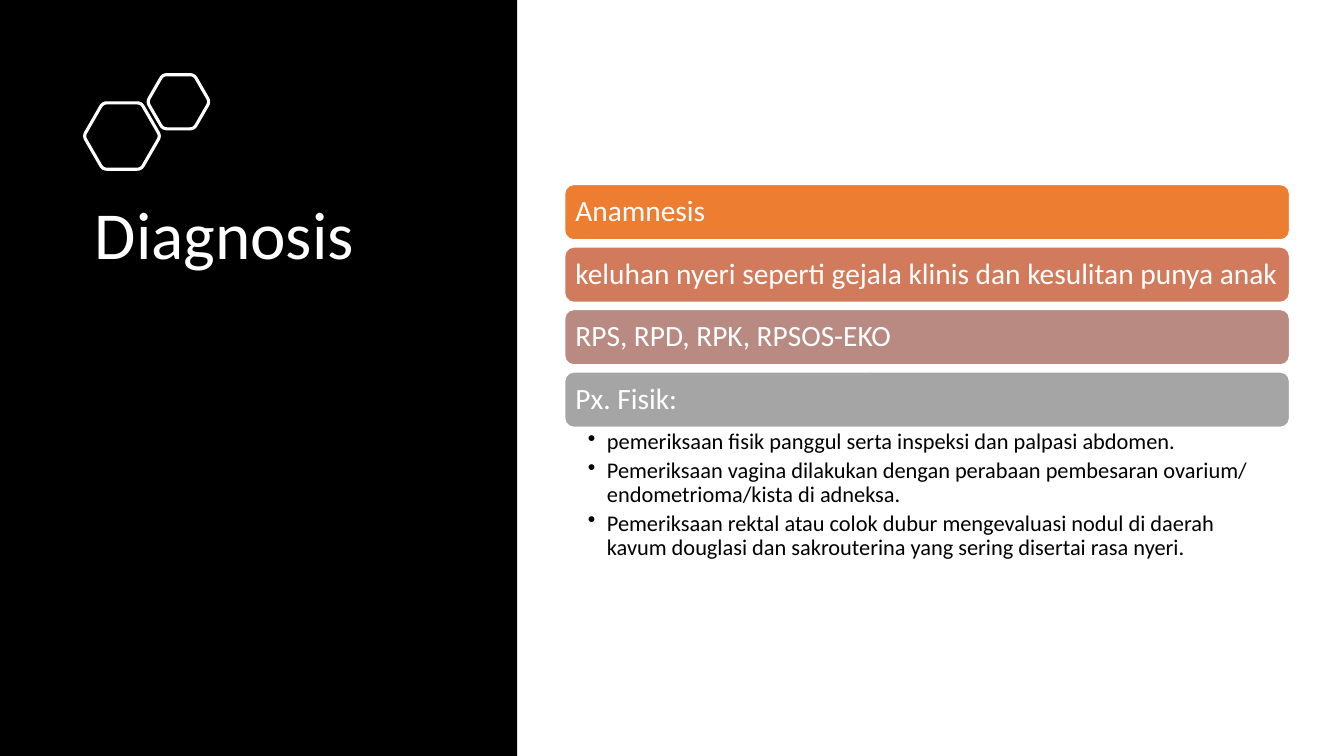
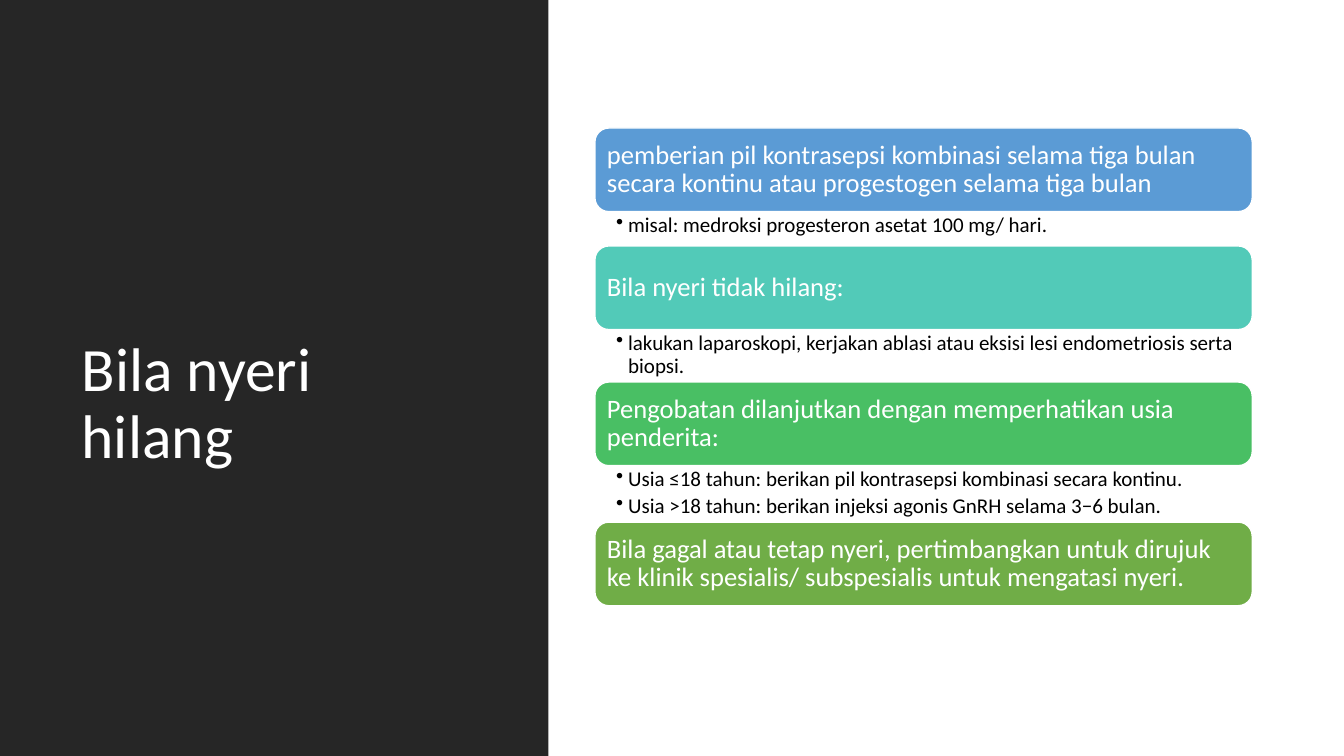
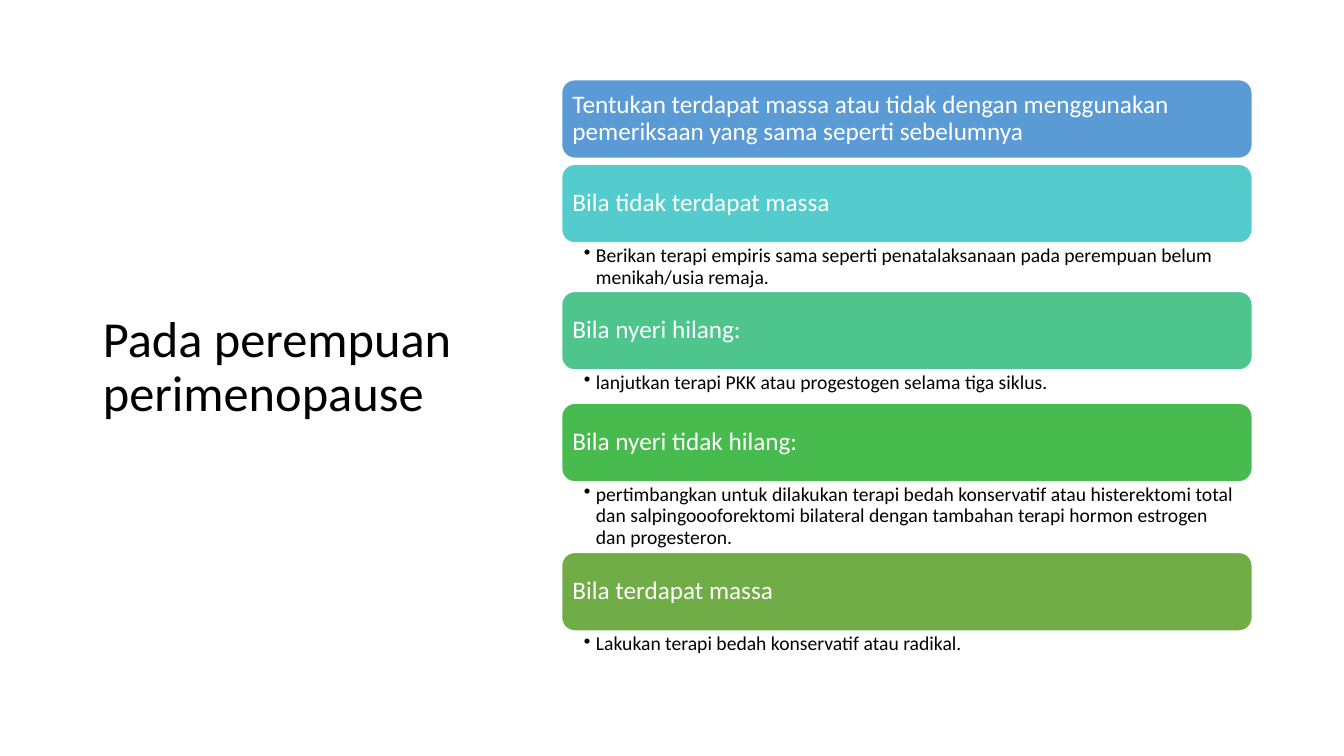
from math import cos, pi, sin

from lxml.etree import SubElement
from pptx import Presentation
from pptx.dml.color import RGBColor
from pptx.enum.shapes import MSO_SHAPE as Shape
from pptx.enum.text import MSO_ANCHOR as Anchor, MSO_AUTO_SIZE as Fit, PP_ALIGN as Align
from pptx.oxml.ns import qn
from pptx.util import Inches, Pt

WHITE = RGBColor(0xFF, 0xFF, 0xFF)
BLACK = RGBColor(0x00, 0x00, 0x00)
COAL = RGBColor(0x26, 0x26, 0x26)
ORANGE = RGBColor(0xED, 0x7D, 0x31)
CLAY = RGBColor(0xD1, 0x7B, 0x5C)
ROSE = RGBColor(0xB9, 0x8A, 0x82)
GRAY = RGBColor(0xA5, 0xA5, 0xA5)
BLUE = RGBColor(0x5B, 0x9B, 0xD5)
CYAN = RGBColor(0x54, 0xCC, 0xCD)
TEAL = RGBColor(0x52, 0xCA, 0xB8)
MINT = RGBColor(0x4D, 0xC5, 0x8D)
GREEN = RGBColor(0x49, 0xBF, 0x64)
GRASS = RGBColor(0x48, 0xBB, 0x4F)
LEAF = RGBColor(0x70, 0xAD, 0x47)


class Deck:
    font = "Calibri"
    title_only = 5

    def __init__(self):
        self.prs = Presentation()
        self.prs.slide_width = Inches(13.33)
        self.prs.slide_height = Inches(7.5)

    def add(self):
        layout = self.prs.slide_layouts[self.title_only]
        self.shapes = self.prs.slides.add_slide(layout).shapes

    def style(self, para, size, color):
        para.alignment = Align.LEFT
        para.line_spacing = 0.9
        para.font.name = self.font
        para.font.size = Pt(size)
        para.font.color.rgb = color

    def frame(self, shape, anchor, pads):
        """Set wrapping, anchor and the left, top, right and bottom insets."""
        frame = shape.text_frame
        frame.word_wrap = True
        frame.auto_size = Fit.NONE
        frame.vertical_anchor = anchor
        (frame.margin_left, frame.margin_top,
         frame.margin_right, frame.margin_bottom) = map(Inches, pads)
        return frame

    def title(self, text, box, size, anchor, color=WHITE):
        shape = self.shapes.title
        shape.left, shape.top, shape.width, shape.height = map(Inches, box)
        frame = self.frame(shape, anchor, (0.1, 0.05, 0.1, 0.05))
        frame.text = text
        self.style(frame.paragraphs[0], size, color)

    def panel(self, width, color):
        """Fill the left side of the slide, behind the title."""
        shape = self.shapes.add_shape(
            Shape.RECTANGLE, 0, 0, Inches(width), self.prs.slide_height)
        shape.shadow.inherit = False
        shape.fill.solid()
        shape.fill.fore_color.rgb = color
        shape.line.fill.background()
        self.shapes.title.element.addprevious(shape.element)

    def hexagon(self, x, y, radius, cut=0.04, steps=4):
        """Outline a hexagon centred on x, y, its corners rounded over cut."""
        tips = [(x + radius * cos(i * pi / 3), y + radius * sin(i * pi / 3))
                for i in range(6)]
        part = cut / radius
        dots = []
        for i, tip in enumerate(tips):
            start, end = ([a + (b - a) * part for a, b in zip(tip, near)]
                          for near in (tips[i - 1], tips[(i + 1) % 6]))
            for k in range(steps + 1):
                t = k / steps
                dots.append([Inches((1 - t) ** 2 * a + 2 * t * (1 - t) * b + t * t * c)
                             for a, b, c in zip(start, tip, end)])
        pen = self.shapes.build_freeform(*dots[0])
        pen.add_line_segments(dots[1:], close=True)
        shape = pen.convert_to_shape()
        shape.shadow.inherit = False
        shape.fill.background()
        shape.line.color.rgb = WHITE
        shape.line.width = Pt(2.25)

    def bar(self, text, box, color, size, pad):
        shape = self.shapes.add_shape(Shape.ROUNDED_RECTANGLE, *map(Inches, box))
        shape.shadow.inherit = False
        shape.fill.solid()
        shape.fill.fore_color.rgb = color
        shape.line.color.rgb = WHITE
        shape.line.width = Pt(1)
        frame = self.frame(shape, Anchor.MIDDLE, [pad] * 4)
        frame.text = text
        self.style(frame.paragraphs[0], size, WHITE)

    def points(self, items, box, size, sides, indent):
        shape = self.shapes.add_textbox(*map(Inches, box))
        frame = self.frame(shape, Anchor.TOP, (sides[0], 0.03, sides[1], 0.03))
        frame.text = "\n".join(items)
        for para in frame.paragraphs:
            self.style(para, size, BLACK)
            para.space_after = Pt(0.2 * size)
            props = para._p.get_or_add_pPr()
            props.set("marL", str(Inches(indent)))
            props.set("indent", str(-Inches(indent)))
            SubElement(props, qn("a:buChar")).set("char", "•")

    def stack(self, rows, left, top, width, high, gap, sizes, pad, sides, indent):
        """Pile up bars; a row is text, colour, list items and list height."""
        for text, color, items, deep in rows:
            self.bar(text, (left, top, width, high), color, sizes[0], pad)
            top += high
            if items:
                self.points(items, (left, top, width, deep), sizes[1], sides, indent)
            top += deep or gap


def main():
    deck = Deck()

    deck.add()
    deck.panel(5.13, BLACK)
    deck.title("Diagnosis", (0.84, 1.95, 3.92, 3.5), 48, Anchor.TOP)
    deck.hexagon(1.21, 1.35, 0.38)
    deck.hexagon(1.77, 1.01, 0.31)
    deck.stack([
        ("Anamnesis", ORANGE, [], 0),
        ("keluhan nyeri seperti gejala klinis dan kesulitan punya anak", CLAY, [], 0),
        ("RPS, RPD, RPK, RPSOS-EKO", ROSE, [], 0),
        ("Px. Fisik:", GRAY, [
            "pemeriksaan fisik panggul serta inspeksi dan palpasi abdomen.",
            "Pemeriksaan vagina dilakukan dengan perabaan pembesaran ovarium/ "
            "endometrioma/kista di adneksa.",
            "Pemeriksaan rektal atau colok dubur mengevaluasi nodul di daerah "
            "kavum douglasi dan sakrouterina yang sering disertai rasa nyeri.",
        ], 1.4),
    ], left=5.6, top=1.83, width=7.19, high=0.55, gap=0.07,
        sizes=(21, 16), pad=0.08, sides=(0.23, 0.16), indent=0.19)

    deck.add()
    deck.panel(5.44, COAL)
    deck.title("Bila nyeri hilang", (0.71, 0.7, 3.69, 4.03), 44, Anchor.BOTTOM)
    deck.stack([
        ("pemberian pil kontrasepsi kombinasi selama tiga bulan secara kontinu "
         "atau progestogen selama tiga bulan", BLUE,
         ["misal: medroksi progesteron asetat 100 mg/ hari."], 0.34),
        ("Bila nyeri tidak hilang:", TEAL,
         ["lakukan laparoskopi, kerjakan ablasi atau eksisi lesi endometriosis "
          "serta biopsi."], 0.52),
        ("Pengobatan dilanjutkan dengan memperhatikan usia penderita:", GREEN, [
            "Usia ≤18 tahun: berikan pil kontrasepsi kombinasi secara kontinu.",
            "Usia >18 tahun: berikan injeksi agonis GnRH selama 3−6 bulan.",
        ], 0.56),
        ("Bila gagal atau tetap nyeri, pertimbangkan untuk dirujuk ke klinik "
         "spesialis/ subspesialis untuk mengatasi nyeri.", LEAF, [], 0),
    ], left=5.9, top=1.27, width=6.52, high=0.83, gap=0.06,
        sizes=(19, 15), pad=0.08, sides=(0.21, 0.15), indent=0.12)

    deck.add()
    deck.title("Pada perempuan perimenopause", (0.92, 0.61, 3.69, 6.09), 36,
               Anchor.MIDDLE, BLACK)
    deck.stack([
        ("Tentukan terdapat massa atau tidak dengan menggunakan pemeriksaan "
         "yang sama seperti sebelumnya", BLUE, [], 0),
        ("Bila tidak terdapat massa", CYAN,
         ["Berikan terapi empiris sama seperti penatalaksanaan pada perempuan "
          "belum menikah/usia remaja."], 0.48),
        ("Bila nyeri hilang:", MINT,
         ["lanjutkan terapi PKK atau progestogen selama tiga siklus."], 0.33),
        ("Bila nyeri tidak hilang:", GRASS,
         ["pertimbangkan untuk dilakukan terapi bedah konservatif atau "
          "histerektomi total dan salpingoooforektomi bilateral dengan tambahan "
          "terapi hormon estrogen dan progesteron."], 0.7),
        ("Bila terdapat massa", LEAF,
         ["Lakukan terapi bedah konservatif atau radikal."], 0.33),
    ], left=5.57, top=0.79, width=6.85, high=0.78, gap=0.06,
        sizes=(18, 14), pad=0.07, sides=(0.22, 0.14), indent=0.12)

    deck.prs.save("out.pptx")


if __name__ == "__main__":
    main()
